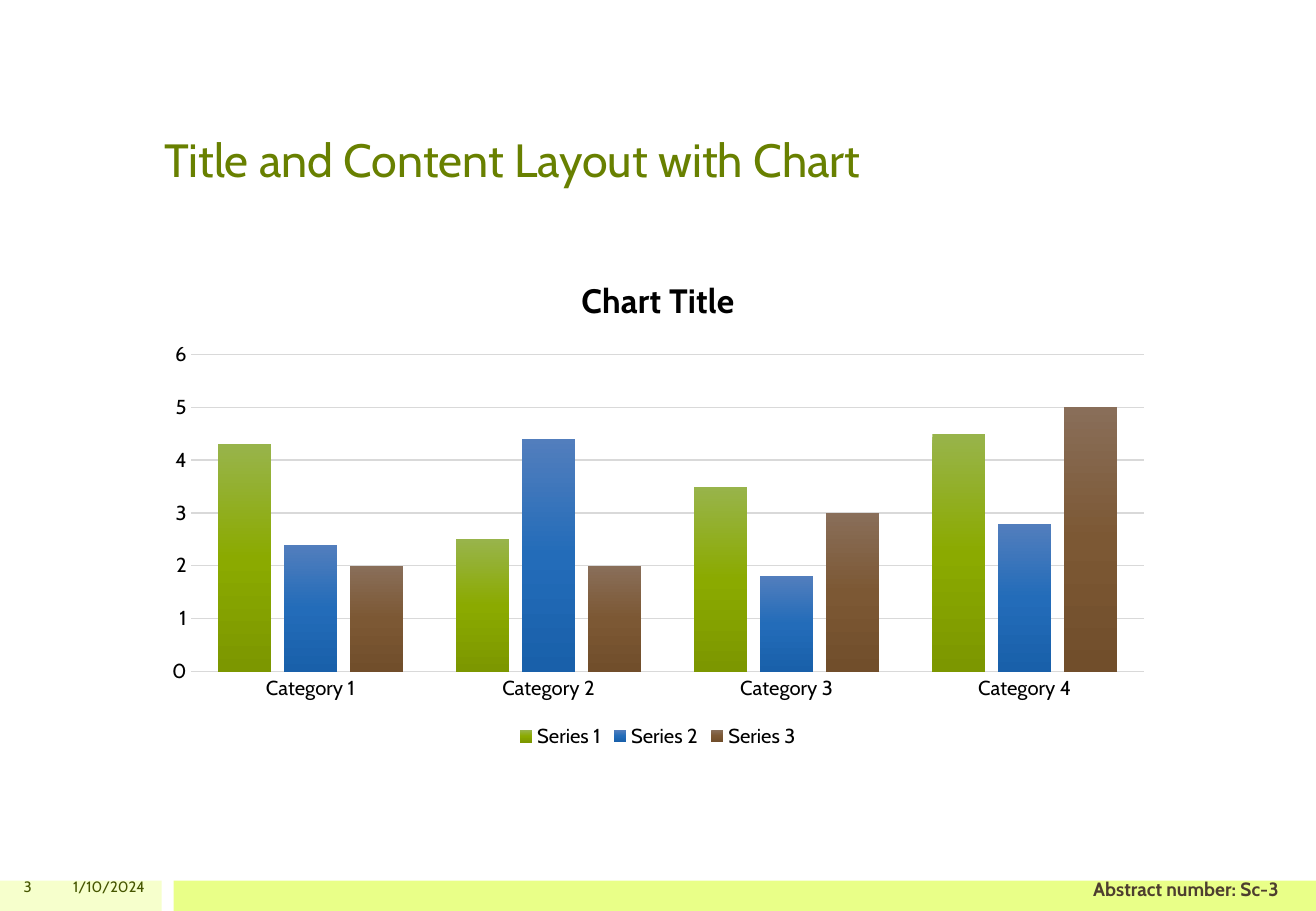
from pptx import Presentation
from pptx.chart.data import CategoryChartData
from pptx.dml.color import RGBColor
from pptx.enum import chart as charts, shapes, text
from pptx.oxml import parse_xml
from pptx.oxml.ns import nsdecls
from pptx.util import Inches, Pt


def style(font, size, color, bold=False):
    font.name = "Cabin"
    font.size = Pt(size)
    font.bold = bold
    font.color.rgb = RGBColor.from_string(color)


deck = Presentation()
deck.slide_width, deck.slide_height = Inches(10.83), Inches(7.5)
slide = deck.slides.add_slide(deck.slide_layouts[5])

for left, width, color in [(0, 1.33, "F6FFCC"), (1.43, 9.4, "E9FF88")]:
    band = slide.shapes.add_shape(
        shapes.MSO_SHAPE.RECTANGLE, Inches(left), Inches(7.25), Inches(width), Inches(0.25))
    band.shadow.inherit = False
    band.fill.solid()
    band.fill.fore_color.rgb = RGBColor.from_string(color)
    band.line.fill.background()

title = slide.shapes.title
title.left, title.top, title.width, title.height = map(Inches, (1.25, 0.3, 8.33, 1.29))
title.text_frame.text = "Title and Content Layout with Chart"
title.text_frame.vertical_anchor = text.MSO_ANCHOR.BOTTOM
heading = title.text_frame.paragraphs[0]
heading.alignment = text.PP_ALIGN.LEFT
style(heading.runs[0].font, 27.6, "688000")

series_data = [
    ("Series 1", (4.3, 2.5, 3.5, 4.5), ("98B44B", "8BAA00", "7C9700")),
    ("Series 2", (2.4, 4.4, 1.8, 2.8), ("527EBD", "236CB9", "1960AA")),
    ("Series 3", (2, 2, 3, 5), ("896E59", "7C5834", "714E2B")),
]
data = CategoryChartData()
data.categories = [f"Category {number}" for number in range(1, 5)]
for name, values, _ in series_data:
    data.add_series(name, values)
chart = slide.shapes.add_chart(
    charts.XL_CHART_TYPE.COLUMN_CLUSTERED,
    Inches(1.25), Inches(2.09), Inches(8.33), Inches(4.11), data).chart
style(chart.font, 10, "4D3E2F")

chart.has_title = True
chart.chart_title.text_frame.text = "Chart Title"
chart.chart_title.include_in_layout = False
style(chart.chart_title.text_frame.paragraphs[0].runs[0].font, 20, "000000", True)

chart.has_legend = True
chart.legend.position = charts.XL_LEGEND_POSITION.BOTTOM
chart.legend.include_in_layout = False
style(chart.legend.font, 12, "000000")

categories, scale = chart.category_axis, chart.value_axis
for axis in (categories, scale):
    axis.major_tick_mark = axis.minor_tick_mark = charts.XL_TICK_MARK.NONE
    style(axis.tick_labels.font, 12, "000000")
scale.minimum_scale, scale.maximum_scale, scale.major_unit = 0, 6, 1
scale.format.line.fill.background()
for line in (categories.format.line, scale.major_gridlines.format.line):
    line.width = Pt(0.75)
    line.color.rgb = RGBColor.from_string("D9D9D9")

columns = chart.plots[0]
columns.gap_width, columns.overlap = 100, -24
columns.vary_by_categories = False
for series, (_, _, colors) in zip(columns.series, series_data):
    stops = "".join(
        f'<a:gs pos="{position}"><a:srgbClr val="{color}"/></a:gs>'
        for position, color in zip((0, 50000, 100000), colors))
    series._element.get_or_add_spPr().append(parse_xml(
        f'<a:gradFill {nsdecls("a")}><a:gsLst>{stops}</a:gsLst>'
        '<a:lin ang="5400000" scaled="0"/></a:gradFill>'))

footers = [
    ("3", (0, 7.2, 0.36, 0.2), 8.9, "455500", False),
    ("1/10/2024", (0.4, 7.2, 0.89, 0.2), 8.9, "455500", False),
    ("Abstract number: Sc-3", (8.64, 7.22, 2.24, 0.19), 11.4, "4D3E2F", True),
]
for wording, place, size, color, is_abstract in footers:
    frame = slide.shapes.add_textbox(*map(Inches, place)).text_frame
    frame.text = wording
    frame.word_wrap = True
    line = frame.paragraphs[0]
    style(line.runs[0].font, size, color, is_abstract)
    if is_abstract:
        frame.margin_left = frame.margin_right = frame.margin_top = frame.margin_bottom = 0
        line.alignment = text.PP_ALIGN.CENTER
    else:
        frame.vertical_anchor = text.MSO_ANCHOR.MIDDLE
        line.alignment = text.PP_ALIGN.RIGHT
        line.space_after = Pt(4.9)

deck.save("out.pptx")
